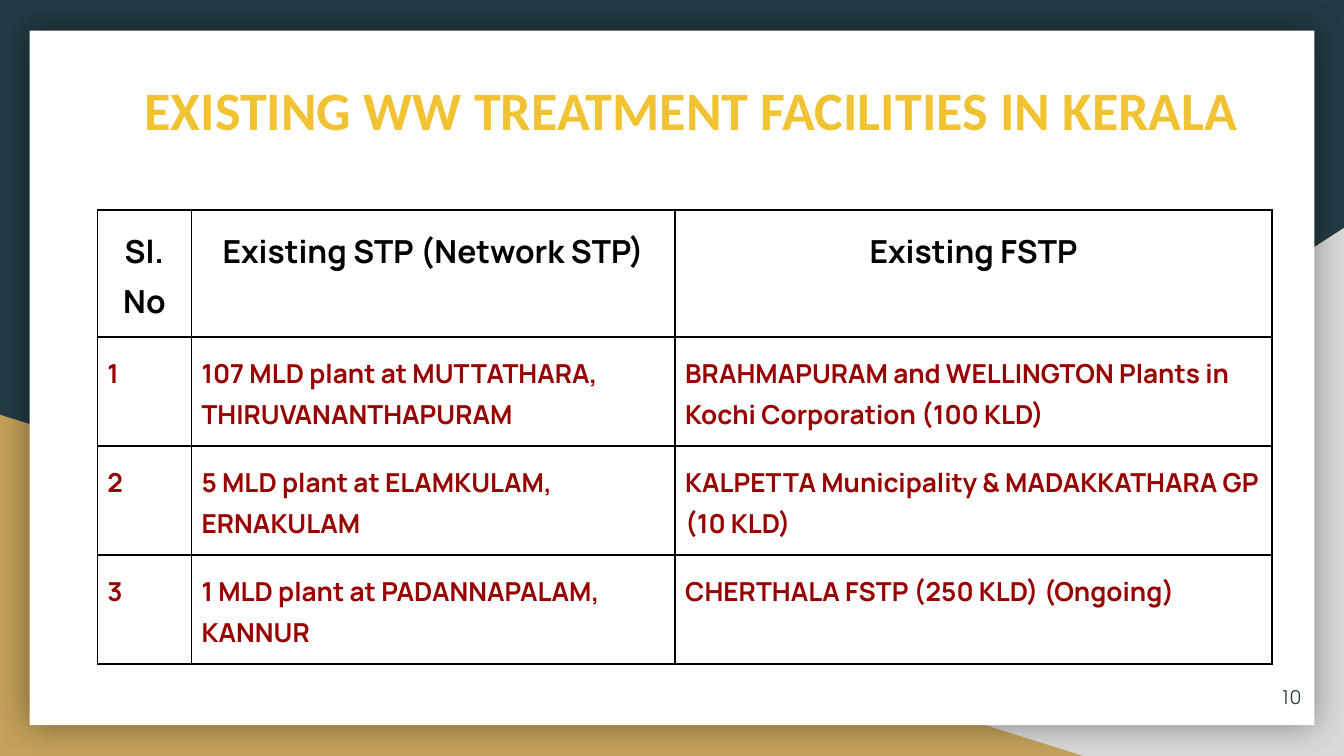
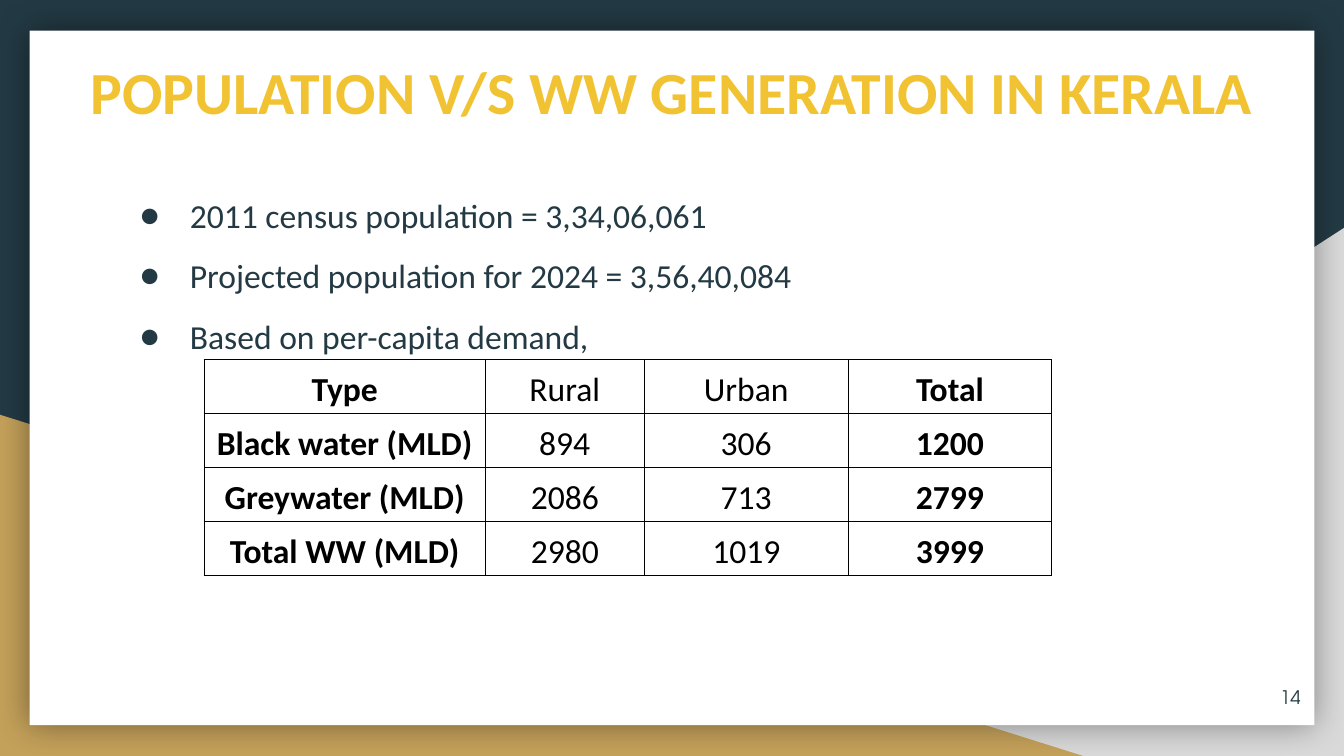
import dataclasses

import lxml.etree
import pptx
import pptx.dml.color
import pptx.enum.shapes
import pptx.enum.text
import pptx.oxml.ns
import pptx.util

Cm = pptx.util.Cm
Pt = pptx.util.Pt
qn = pptx.oxml.ns.qn
Shape = pptx.enum.shapes.MSO_SHAPE
Align = pptx.enum.text.PP_ALIGN
Anchor = pptx.enum.text.MSO_ANCHOR


@dataclasses.dataclass(frozen=True)
class Theme:
    navy: str = "233A44"
    grey: str = "D9D9D9"
    sand: str = "C4A15A"
    white: str = "FFFFFF"
    black: str = "000000"
    gold: str = "F1C232"
    maroon: str = "980000"
    main_font: str = "Calibri"
    facility_font: str = "Manrope"
    number_font: str = "TeX Gyre Adventor"
    facilities_title_size: float = 29
    generation_title_size: float = 32
    body_size: float = 18
    header_size: float = 17
    facility_size: float = 14
    number_size: float = 10


THEME = Theme()


def rgb(color):
    return pptx.dml.color.RGBColor.from_string(color)


def add_xml(parent, tag, **attributes):
    return lxml.etree.SubElement(parent, qn(tag), attributes)


def write(frame, text, *, size=THEME.body_size, font=THEME.main_font, color=THEME.black,
          bold=False, align=Align.LEFT, spacing=1.0, bullet=None):
    lines = text.split("\n")
    for index, line in enumerate(lines):
        paragraph = frame.paragraphs[0] if index == 0 else frame.add_paragraph()
        paragraph.alignment = align
        paragraph.line_spacing = spacing
        if bullet:
            properties = paragraph._p.get_or_add_pPr()
            properties.set("marL", str(Cm(1.27)))
            properties.set("indent", str(-Cm(0.95)))
            add_xml(add_xml(properties, "a:buClr"), "a:srgbClr", val=color)
            add_xml(properties, "a:buFont", typeface=font)
            add_xml(properties, "a:buChar", char=bullet)
        run = paragraph.add_run()
        run.text = line
        run.font.name = font
        run.font.size = Pt(size)
        run.font.bold = bold
        run.font.color.rgb = rgb(color)


class Deck:
    def __init__(self, theme):
        self.theme = theme
        self.presentation = pptx.Presentation()
        self.presentation.slide_width = Cm(25.4)
        self.presentation.slide_height = Cm(14.29)
        self.slide = None

    def start_slide(self, number):
        theme = self.theme
        self.slide = self.presentation.slides.add_slide(self.presentation.slide_layouts[6])
        background = self.slide.background.fill
        background.solid()
        background.fore_color.rgb = rgb(theme.navy)

        right_corner = self.shape(Shape.RIGHT_TRIANGLE, (9.96, 4.31, 15.44, 9.98), theme.grey)
        right_corner._element.spPr.find(qn("a:xfrm")).set("flipH", "1")
        self.shape(Shape.RIGHT_TRIANGLE, (0, 7.84, 20.47, 6.45), theme.sand)
        panel = self.shape(Shape.RECTANGLE, (0.56, 0.58, 24.28, 13.13), theme.white)
        self.glow(panel)
        self.text((23.31, 12.62, 1.52, 1.1), str(number), anchor=Anchor.MIDDLE,
                  size=theme.number_size, font=theme.number_font, color=theme.navy,
                  align=Align.RIGHT)

    def shape(self, kind, box, color):
        shape = self.slide.shapes.add_shape(kind, *map(Cm, box))
        shape.shadow.inherit = False
        shape.fill.solid()
        shape.fill.fore_color.rgb = rgb(color)
        shape.line.fill.background()
        return shape

    def glow(self, shape):
        effects = shape._element.spPr.find(qn("a:effectLst"))
        shadow = add_xml(effects, "a:outerShdw", blurRad=str(Pt(18)), dist="0", dir="0",
                         algn="ctr", rotWithShape="0")
        color = add_xml(shadow, "a:srgbClr", val=self.theme.black)
        add_xml(color, "a:alpha", val="40000")

    def text(self, box, text, anchor=Anchor.TOP, **style):
        frame = self.slide.shapes.add_textbox(*map(Cm, box)).text_frame
        frame.word_wrap = True
        frame.vertical_anchor = anchor
        frame.margin_left = frame.margin_right = Cm(0.25)
        frame.margin_top = frame.margin_bottom = Cm(0.25)
        write(frame, text, **style)

    def title(self, box, text, size):
        self.text(box, text, size=size, color=self.theme.gold, bold=True, align=Align.CENTER)

    def table(self, corner, widths, heights, rows, style_of, margins, border,
              anchor=Anchor.TOP):
        left, top = corner
        table = self.slide.shapes.add_table(
            len(rows), len(widths), Cm(left), Cm(top), Cm(sum(widths)), Cm(sum(heights))).table
        table.first_row = table.horz_banding = False
        for column, width in zip(table.columns, widths):
            column.width = Cm(width)
        for line, height in zip(table.rows, heights):
            line.height = Cm(height)
        for row, texts in enumerate(rows):
            for column, text in enumerate(texts):
                cell = table.cell(row, column)
                cell.vertical_anchor = anchor
                cell.margin_left = cell.margin_right = Cm(margins[0])
                cell.margin_top = cell.margin_bottom = Cm(margins[1])
                self.borders(cell, border)
                cell.fill.background()
                write(cell.text_frame, text, spacing=1.15, **style_of(row, column))

    def borders(self, cell, width):
        properties = cell._tc.get_or_add_tcPr()
        for side in ("a:lnL", "a:lnR", "a:lnT", "a:lnB"):
            edge = add_xml(properties, side, w=str(Pt(width)))
            add_xml(add_xml(edge, "a:solidFill"), "a:srgbClr", val=self.theme.black)


def facility_style(row, column):
    style = {"font": THEME.facility_font, "bold": True}
    if row == 0:
        return style | {"size": THEME.header_size, "align": Align.CENTER}
    return style | {"size": THEME.facility_size, "color": THEME.maroon}


def generation_style(row, column):
    return {"bold": column in (0, 3), "align": Align.CENTER}


def add_facilities(deck):
    deck.start_slide(10)
    deck.title((2.09, 1.19, 22.2, 1.4), "EXISTING WW TREATMENT FACILITIES IN KERALA ",
               THEME.facilities_title_size)
    facilities = [
        ("Sl. No", "Existing STP (Network STP)", "Existing FSTP"),
        ("1", "107 MLD plant at MUTTATHARA, THIRUVANANTHAPURAM",
         "BRAHMAPURAM and WELLINGTON Plants in Kochi Corporation (100 KLD)"),
        ("2", "5 MLD plant at ELAMKULAM, ERNAKULAM",
         "KALPETTA Municipality & MADAKKATHARA GP (10 KLD)"),
        ("3", "1 MLD plant at PADANNAPALAM, KANNUR", "CHERTHALA FSTP (250 KLD) (Ongoing)"),
    ]
    deck.table((1.84, 3.97), (1.78, 9.14, 11.28), (2.4, 2.06, 2.06, 2.06), facilities,
               facility_style, margins=(0.19, 0.25), border=1)


def add_generation(deck):
    deck.start_slide(14)
    deck.title((1.21, 0.79, 22.99, 1.65), "POPULATION V/S WW GENERATION IN KERALA",
               THEME.generation_title_size)
    deck.text((2.07, 3.05, 21.06, 3.76),
              "2011 census population = 3,34,06,061\n"
              "Projected population for 2024 = 3,56,40,084\n"
              "Based on per-capita demand,",
              color=THEME.navy, spacing=1.5, bullet="●")
    generation = [
        ("Type", "Rural", "Urban", "Total"),
        ("Black water (MLD)", "894", "306", "1200"),
        ("Greywater (MLD)", "2086", "713", "2799"),
        ("Total WW (MLD)", "2980", "1019", "3999"),
    ]
    deck.table((3.86, 6.8), (5.31, 3.01, 3.85, 3.85), [1.02] * 4, generation,
               generation_style, margins=(0.08, 0.05), border=0.75, anchor=Anchor.MIDDLE)


def main():
    deck = Deck(THEME)
    add_facilities(deck)
    add_generation(deck)
    deck.presentation.save("out.pptx")


if __name__ == "__main__":
    main()
